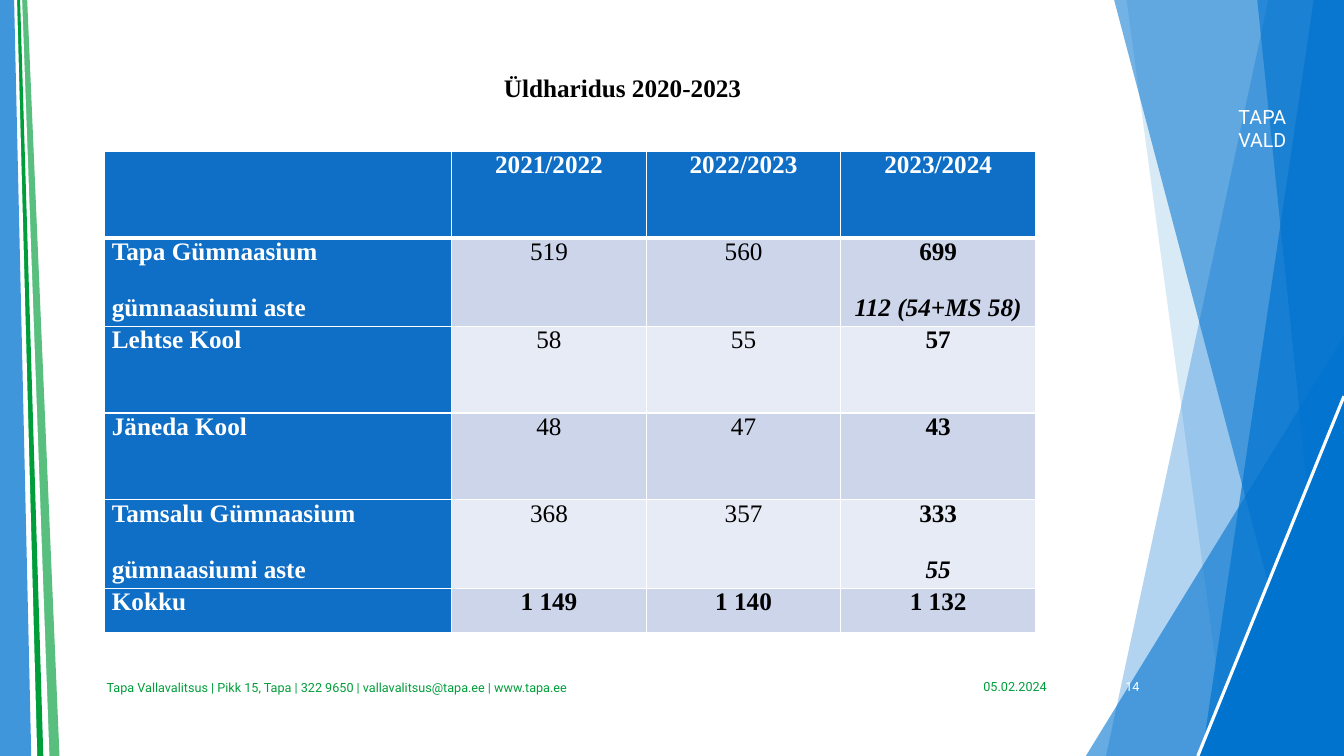
from dataclasses import dataclass

from lxml import etree
from pptx import Presentation
from pptx import util as u
from pptx.dml.color import RGBColor
from pptx.enum import shapes, text
from pptx.oxml import ns

COLORS = {
    "blue": "0073CF", "green": "009E3B", "white": "FFFFFF", "black": "000000",
    "header": "0F6FC6", "band_dark": "CCD5EA", "band_light": "E7EBF5",
}
SERIF = "Times New Roman"
SANS = "Roboto"
LEFT = text.PP_ALIGN.LEFT
CENTER = text.PP_ALIGN.CENTER
RIGHT = text.PP_ALIGN.RIGHT
JUSTIFY = text.PP_ALIGN.JUSTIFY
WIDTH, HEIGHT = 13.33, 7.5


@dataclass
class Facet:
    points: list[tuple[float, float]]
    color: str
    opacity: int = 100


@dataclass
class Triangle:
    left: float
    top: float
    opacity: int = 100


@dataclass
class Label:
    wording: str
    box: tuple[float, float, float, float]
    size: int
    color: str
    alignment: text.PP_ALIGN


@dataclass
class TableRow:
    height: float
    name: str
    values: list[str]
    bold: tuple[bool, bool, bool] = (False, False, True)


def strip(top_right: float, bottom_right: float, color: str, opacity: int = 100) -> Facet:
    return Facet([(0, 0), (top_right, 0), (bottom_right, 7.5), (0, 7.5)], color, opacity)


BACKDROP = [
    Facet([(12.58, 0), (WIDTH, 0), (WIDTH, 7.5), (10.97, 7.5)], "blue", 30),
    Facet([(11.17, -0.03), (WIDTH, -0.03), (WIDTH, 7.48), (12.18, 7.48)], "blue", 15),
    Triangle(10.77, 3.33, 60),
    Facet([(11.05, 0), (WIDTH, 0), (WIDTH, 7.5), (13.03, 7.5)], "blue", 55),
    Facet([(13.03, 0), (WIDTH, 0), (WIDTH, 7.5), (11.92, 7.5)], "blue", 65),
    Facet([(12.47, 0), (WIDTH, 0), (WIDTH, 7.5), (13.24, 7.5)], "blue", 60),
    Triangle(11.88, 3.93),
]
STRIPS = [
    strip(0.27, 0.59, "green", 65),
    strip(0.22, 0.49, "white"),
    strip(0.2, 0.43, "green"),
    strip(0.17, 0.37, "white"),
    strip(0.14, 0.31, "blue", 75),
]
LABELS = [
    Label("TAPA VALD", (11.93, 1.1, 1.18, 0.34), 14, "white", CENTER),
    Label("05.02.2024", (9.48, 6.61, 1, 0.4), 9, "green", RIGHT),
    Label("Tapa Vallavalitsus | Pikk 15, Tapa | 322 9650 | vallavalitsus@tapa.ee | www.tapa.ee",
          (0.96, 6.62, 8.34, 0.4), 9, "green", LEFT),
    Label("14", (10.65, 6.61, 0.75, 0.4), 9, "white", RIGHT),
]
COLUMN_WIDTHS = [3.44, 1.93, 1.93, 1.93]
TABLE_ROWS = [
    TableRow(0.86, "", ["2021/2022", "2022/2023", "2023/2024"], (True, True, True)),
    TableRow(0.86, "Tapa Gümnaasium\ngümnaasiumi aste", ["519", "560", "699\n112 (54+MS 58)"]),
    TableRow(0.86, "Lehtse Kool", ["58", "55", "57"]),
    TableRow(0.86, "Jäneda Kool", ["48", "47", "43"]),
    TableRow(0.86, "Tamsalu Gümnaasium\ngümnaasiumi aste", ["368", "357", "333\n55"]),
    TableRow(0.44, "Kokku", ["1 149", "1 140", "1 132"], (True, True, True)),
]


def rgb(name: str) -> RGBColor:
    return RGBColor.from_string(COLORS[name])


def set_all(target, values: dict) -> None:
    for name, value in values.items():
        setattr(target, name, value)


def format_paragraph(paragraph, wording: str, alignment, color: str, font_values: dict) -> None:
    paragraph.alignment = alignment
    run = paragraph.add_run()
    run.text = wording
    set_all(run.font, font_values)
    run.font.color.rgb = rgb(color)


def paint(shape, color: str, opacity: int) -> None:
    shape.shadow.inherit = False
    shape.fill.solid()
    shape.fill.fore_color.rgb = rgb(color)
    shape.line.fill.background()
    if opacity < 100:
        fill_color = shape.fill._xPr.find(".//" + ns.qn("a:srgbClr"))
        etree.SubElement(fill_color, ns.qn("a:alpha"), val=str(opacity * 1000))


def draw_facet(slide, facet: Facet) -> None:
    points = [(u.Inches(x), u.Inches(y)) for x, y in facet.points]
    builder = slide.shapes.build_freeform(*points[0], scale=1.0)
    builder.add_line_segments(points[1:], close=True)
    paint(builder.convert_to_shape(), facet.color, facet.opacity)


def draw_triangle(slide, triangle: Triangle) -> None:
    box = (triangle.left, triangle.top, WIDTH - triangle.left, HEIGHT - triangle.top)
    shape = slide.shapes.add_shape(
        shapes.MSO_SHAPE.ISOSCELES_TRIANGLE, *(u.Inches(value) for value in box))
    shape.adjustments[0] = 1.0
    paint(shape, "blue", triangle.opacity)


def draw_edge_line(slide) -> None:
    line = slide.shapes.add_connector(
        shapes.MSO_CONNECTOR.STRAIGHT,
        u.Inches(WIDTH), u.Inches(3.93), u.Inches(11.88), u.Inches(HEIGHT))
    line.line.color.rgb = rgb("white")
    line.line.width = u.Pt(2.25)
    etree.SubElement(line._element.spPr, ns.qn("a:effectLst"))


def draw_label(slide, label: Label) -> None:
    shape = slide.shapes.add_textbox(*(u.Inches(value) for value in label.box))
    set_all(shape.text_frame, {"word_wrap": True, "vertical_anchor": text.MSO_ANCHOR.MIDDLE})
    format_paragraph(shape.text_frame.paragraphs[0], label.wording, label.alignment,
                     label.color, {"name": SANS, "size": u.Pt(label.size)})


def draw_title(slide) -> None:
    title = slide.shapes.title
    set_all(title, {"left": u.Inches(0.96), "top": u.Inches(0.67),
                    "width": u.Inches(10.43), "height": u.Inches(0.62)})
    set_all(title.text_frame, {"word_wrap": True, "auto_size": text.MSO_AUTO_SIZE.NONE,
                               "vertical_anchor": text.MSO_ANCHOR.TOP})
    format_paragraph(title.text_frame.paragraphs[0], "Üldharidus 2020-2023", CENTER,
                     "black", {"name": SERIF, "size": u.Pt(18), "bold": True})


def set_borders(cell, is_header: bool, below_header: bool) -> None:
    widths = {"L": 1, "R": 1, "T": 3 if below_header else 1, "B": 3 if is_header else 1}
    properties = cell._tc.get_or_add_tcPr()
    for side, width in widths.items():
        border = etree.SubElement(properties, ns.qn(f"a:ln{side}"), w=str(u.Pt(width)))
        fill = etree.SubElement(border, ns.qn("a:solidFill"))
        etree.SubElement(fill, ns.qn("a:srgbClr"), val=COLORS["white"])


def fill_cell(cell, wording: str, alignment, color: str, bold: bool, fill: str) -> None:
    set_all(cell, {"margin_left": u.Inches(0.07), "margin_right": u.Inches(0.07),
                   "margin_top": 0, "margin_bottom": 0})
    cell.fill.solid()
    cell.fill.fore_color.rgb = rgb(fill)
    for index, line in enumerate(wording.split("\n") if wording else []):
        paragraph = cell.text_frame.add_paragraph() if index else cell.text_frame.paragraphs[0]
        if index:
            paragraph.space_before = u.Pt(20)
        format_paragraph(paragraph, line, alignment, color, {
            "name": SERIF, "size": u.Pt(18), "bold": bold,
            "italic": index > 0 and alignment == CENTER})


def draw_table(slide) -> None:
    table = slide.shapes.add_table(
        len(TABLE_ROWS), len(COLUMN_WIDTHS), u.Inches(1.04), u.Inches(1.5),
        u.Inches(sum(COLUMN_WIDTHS)), u.Inches(sum(row.height for row in TABLE_ROWS))).table
    for column, width in zip(table.columns, COLUMN_WIDTHS):
        column.width = u.Inches(width)
    for row_index, row in enumerate(TABLE_ROWS):
        table.rows[row_index].height = u.Inches(row.height)
        band = "band_dark" if row_index % 2 else "band_light"
        for column_index, wording in enumerate([row.name, *row.values]):
            cell = table.cell(row_index, column_index)
            set_borders(cell, row_index == 0, row_index == 1)
            is_heading = row_index == 0 or column_index == 0
            fill_cell(cell, wording, CENTER if column_index else JUSTIFY,
                      "white" if is_heading else "black",
                      is_heading or row.bold[column_index - 1],
                      "header" if is_heading else band)


def main() -> None:
    presentation = Presentation()
    presentation.slide_width = u.Inches(WIDTH)
    presentation.slide_height = u.Inches(HEIGHT)
    slide = presentation.slides.add_slide(presentation.slide_layouts[5])
    for part in BACKDROP + STRIPS:
        if isinstance(part, Triangle):
            draw_triangle(slide, part)
        else:
            draw_facet(slide, part)
    draw_edge_line(slide)
    draw_title(slide)
    for label in LABELS:
        draw_label(slide, label)
    draw_table(slide)
    presentation.save("out.pptx")


if __name__ == "__main__":
    main()
